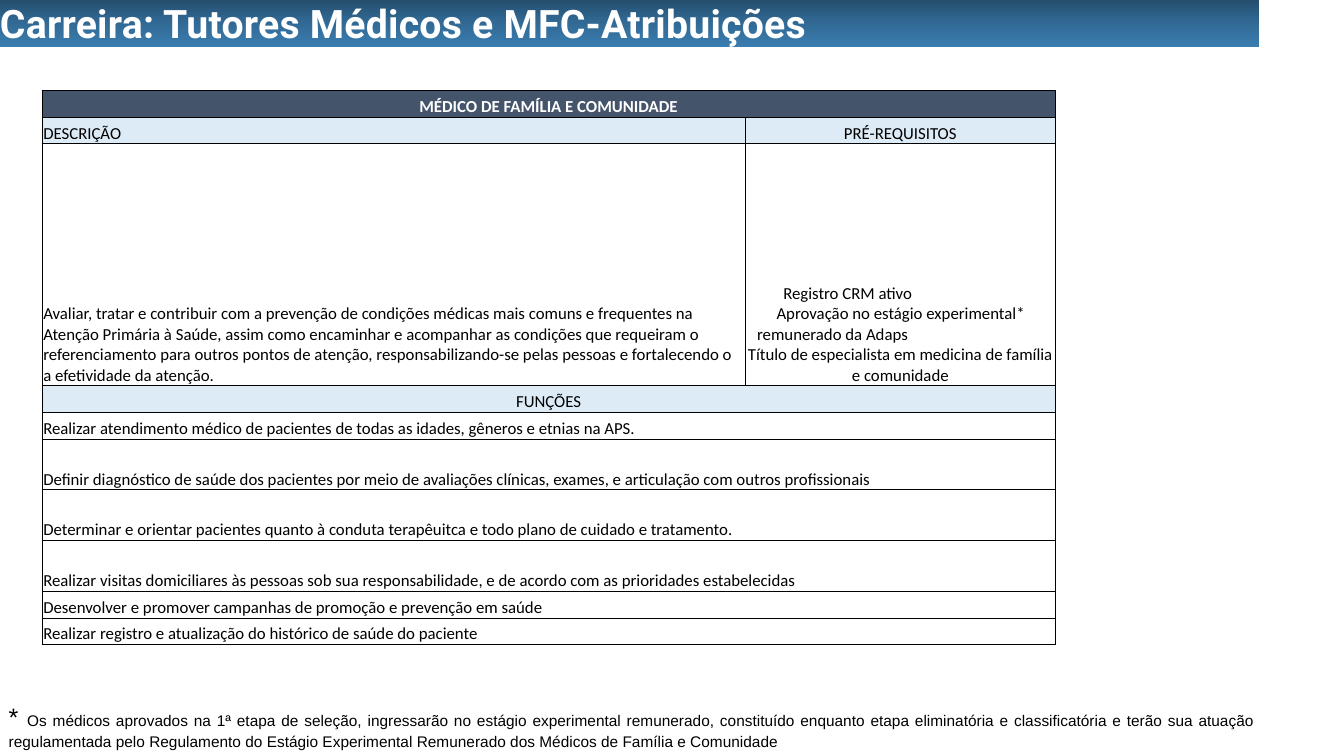
from copy import deepcopy

from lxml import etree
from pptx import Presentation
from pptx import util as u
from pptx.dml.color import RGBColor
from pptx.enum import shapes, text
from pptx.oxml import ns

COLORS = {
    "white": "FFFFFF", "black": "000000", "header": "44546A", "band": "DDEBF7",
    "grad_top": "234A68", "grad_mid": "316994", "grad_end": "3A7DB0",
}
TITLE = "Carreira: Tutores Médicos e MFC-Atribuições"
ROLE = "MÉDICO DE FAMÍLIA E COMUNIDADE"
HEADINGS = ["DESCRIÇÃO", "PRÉ-REQUISITOS"]
DESCRIPTION = (
    "Avaliar, tratar e contribuir com a prevenção de condições médicas mais comuns e "
    "frequentes na Atenção Primária à Saúde, assim como encaminhar e acompanhar as "
    "condições que requeiram o referenciamento para outros pontos de atenção, "
    "responsabilizando-se pelas pessoas e fortalecendo o a efetividade da atenção."
)
REQUIREMENTS = [
    ("Registro CRM ativo", "left", 0.92),
    ("Aprovação no estágio experimental*", "left", 0.75),
    ("remunerado da Adaps", "left", 0.26),
    ("Título de especialista em medicina de família e comunidade", "center", 0),
]
FUNCTIONS_HEADING = "FUNÇÕES"
FUNCTIONS = [
    ("Realizar atendimento médico de pacientes de todas as idades, gêneros e etnias na APS.", 0.67),
    ("Definir diagnóstico de saúde dos pacientes por meio de avaliações clínicas, exames, "
     "e articulação com outros profissionais", 1.28),
    ("Determinar e orientar pacientes quanto à conduta terapêuitca e todo plano de cuidado "
     "e tratamento.", 1.28),
    ("Realizar visitas domiciliares às pessoas sob sua responsabilidade, e de acordo com as "
     "prioridades estabelecidas", 1.28),
    ("Desenvolver e promover campanhas de promoção e prevenção em saúde", 0.67),
    ("Realizar registro e atualização do histórico de saúde do paciente", 0.67),
]
FOOTNOTE = (
    "Os médicos aprovados na 1ª etapa de seleção, ingressarão no estágio experimental "
    "remunerado, constituído enquanto etapa eliminatória e classificatória e terão sua "
    "atuação regulamentada pelo Regulamento do Estágio Experimental Remunerado dos Médicos "
    "de Família e Comunidade"
)
COLUMN_WIDTHS = [17.73, 7.8]
ROW_HEIGHTS = [0.67, 0.67, 6.1, 0.67] + [height for _, height in FUNCTIONS]
ALIGN = {
    "left": text.PP_ALIGN.LEFT,
    "center": text.PP_ALIGN.CENTER,
    "justify": text.PP_ALIGN.JUSTIFY,
}


def rgb(name):
    return RGBColor.from_string(COLORS[name])


def write(p, content, size=12, font="Calibri", color="black", bold=False, align="left",
          indent=0, spacing=None):
    p.alignment = ALIGN[align]
    if indent:
        p._p.get_or_add_pPr().set("marL", str(u.Cm(indent)))
    r = p.add_run()
    r.text = content
    r.font.size = u.Pt(size)
    r.font.name = font
    r.font.bold = bold
    r.font.color.rgb = rgb(color)
    if spacing:
        r._r.get_or_add_rPr().set("spc", str(spacing))


def format_cell(cell, fill=None):
    cell.vertical_anchor = text.MSO_ANCHOR.BOTTOM
    cell.margin_left = cell.margin_right = cell.margin_top = u.Cm(0.03)
    cell.margin_bottom = 0
    if fill:
        cell.fill.solid()
        cell.fill.fore_color.rgb = rgb(fill)
    else:
        cell.fill.background()
    tcPr = cell._tc.get_or_add_tcPr()
    for i, side in enumerate(["lnL", "lnR", "lnT", "lnB"]):
        ln = etree.Element(ns.qn(f"a:{side}"), w=str(u.Pt(0.5)))
        solid = etree.SubElement(ln, ns.qn("a:solidFill"))
        etree.SubElement(solid, ns.qn("a:srgbClr"), val=COLORS["black"])
        tcPr.insert(i, ln)


def add_role_table(slide):
    frame = slide.shapes.add_table(
        len(ROW_HEIGHTS), len(COLUMN_WIDTHS), u.Cm(1.06), u.Cm(2.28),
        u.Cm(sum(COLUMN_WIDTHS)), u.Cm(sum(ROW_HEIGHTS)))
    table = frame.table
    table.first_row = table.horz_banding = False
    for column, width in zip(table.columns, COLUMN_WIDTHS):
        column.width = u.Cm(width)
    for row, height in zip(table.rows, ROW_HEIGHTS):
        row.height = u.Cm(height)

    fills = {0: "header", 1: "band", 3: "band"}
    for i, row in enumerate(table.rows):
        for cell in row.cells:
            format_cell(cell, fills.get(i))
        if i not in (1, 2):
            row.cells[0].merge(row.cells[1])

    def first(row, column=0):
        return table.cell(row, column).text_frame.paragraphs[0]

    write(first(0), ROLE, color="white", bold=True, align="center")
    for column, (heading, align) in enumerate(zip(HEADINGS, ["left", "center"])):
        write(first(1, column), heading, align=align)
    write(first(2), DESCRIPTION)
    tf = table.cell(2, 1).text_frame
    for i, (line, align, indent) in enumerate(REQUIREMENTS):
        p = tf.add_paragraph() if i else tf.paragraphs[0]
        write(p, line, align=align, indent=indent)
    write(first(3), FUNCTIONS_HEADING, align="center")
    for i, (function, _) in enumerate(FUNCTIONS, start=4):
        write(first(i), function)


def add_footnote(slide):
    box = slide.shapes.add_textbox(u.Cm(-0.03), u.Cm(17.55), u.Cm(31.93), u.Cm(1.55))
    tf = box.text_frame
    tf.word_wrap = True
    tf.auto_size = text.MSO_AUTO_SIZE.SHAPE_TO_FIT_TEXT
    p = tf.paragraphs[0]
    write(p, "* ", size=18, font="Arial", align="justify")
    write(p, FOOTNOTE, size=11, font="Arial", align="justify")


def add_title(slide):
    sp = slide.shapes.add_shape(
        shapes.MSO_SHAPE.RECTANGLE, u.Cm(-0.03), u.Cm(-0.08), u.Cm(31.75), u.Cm(1.27))
    sp.shadow.inherit = False
    sp.line.fill.background()
    sp.fill.gradient()
    sp.fill.gradient_angle = 270
    stop_list = sp._element.spPr.find(".//" + ns.qn("a:gsLst"))
    stop_list.insert(1, deepcopy(stop_list[0]))
    names = ["grad_top", "grad_mid", "grad_end"]
    for stop, name, position in zip(sp.fill.gradient_stops, names, [0, 0.5, 1]):
        stop.color.rgb = rgb(name)
        stop.position = position
    tf = sp.text_frame
    tf.word_wrap = True
    tf.vertical_anchor = text.MSO_ANCHOR.MIDDLE
    tf.margin_left = tf.margin_right = tf.margin_bottom = 0
    tf.margin_top = u.Cm(0.03)
    write(tf.paragraphs[0], TITLE, size=28, font="Roboto", color="white", bold=True,
          indent=0.03, spacing=20)


def main():
    prs = Presentation()
    prs.slide_width, prs.slide_height = u.Cm(33.87), u.Cm(19.05)
    slide = prs.slides.add_slide(prs.slide_layouts[6])
    add_role_table(slide)
    add_footnote(slide)
    add_title(slide)
    prs.save("out.pptx")


if __name__ == "__main__":
    main()
